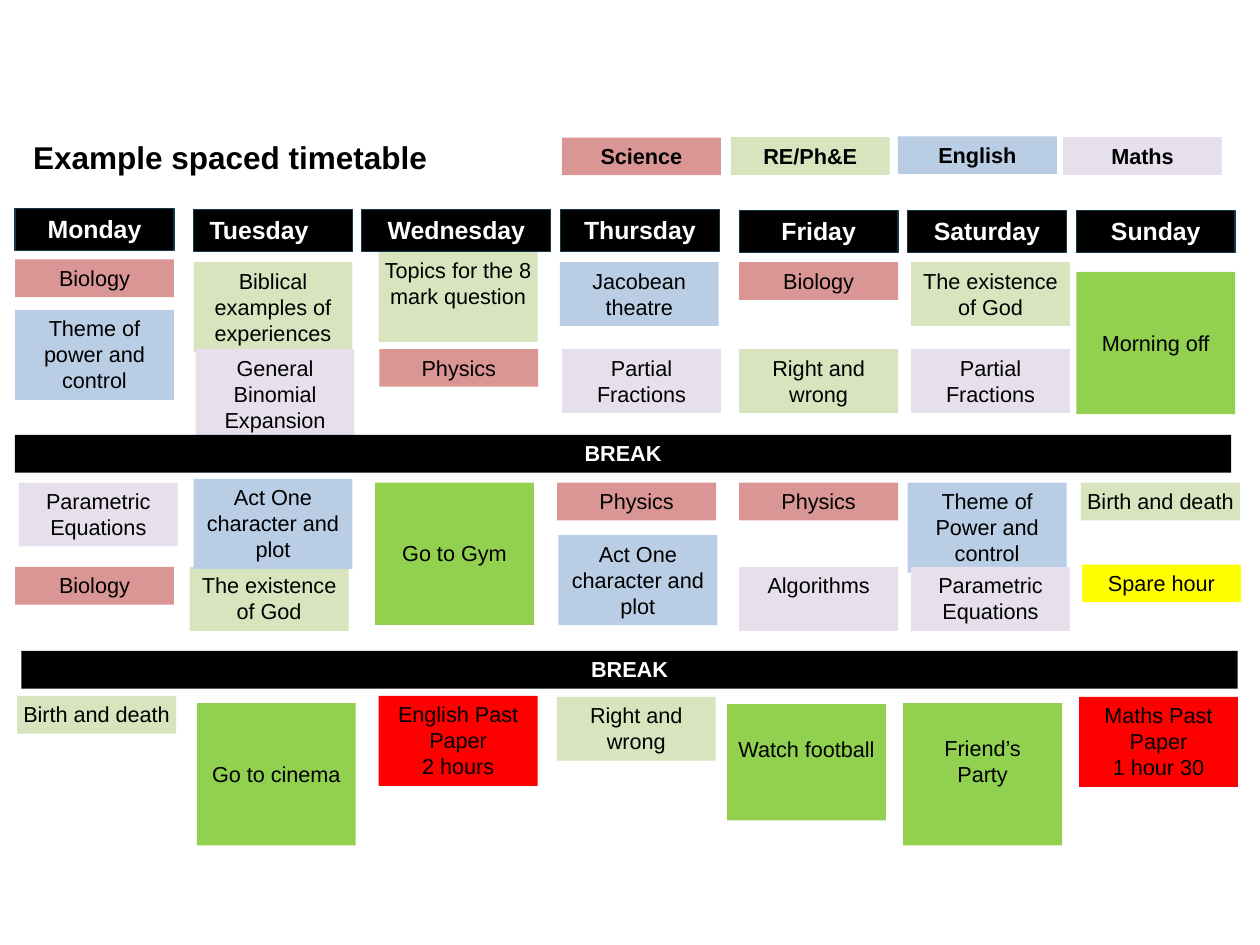
import pptx
import pptx.dml.color
import pptx.enum.shapes
import pptx.enum.text
import pptx.util

Pt = pptx.util.Pt
ALIGN = pptx.enum.text.PP_ALIGN


class Theme:
    font = "Arial"
    title_size, day_size, body_size = 18, 14.2, 12.4
    black, white, day_outline = "000000", "FFFFFF", "103845"
    fills = {
        "Science": "D99694", "RE/Ph&E": "D7E4BD", "English": "B9CDE5",
        "Maths": "E6E0EC", "Leisure": "92D050", "Exam": "FF0000",
        "Spare": "FFFF00",
    }


INSET = 3
LINE_HEIGHT = 14.95
CARD_WIDTH = 90.8
DAY_HEIGHT = 24
DAY_TOP = 119.8
MORNING, AFTERNOON, EVENING = 149.8, 275.8, 398.2
LATE_MORNING, LATE_AFTERNOON = MORNING + 49.7, AFTERNOON + 48.2

# Day: left, width, nudge of the heading, cards.
# Card: text, subject, lines of height, offset from the day's left, top,
# and optionally the number of lines left free above the text.
DAYS = {
    "Monday": (8.6, CARD_WIDTH, -0.5, [
        ("Biology", "Science", 1, 0, MORNING - 1.5),
        ("Theme of power and control", "English", 3, 0, MORNING + 27.3),
        ("Parametric Equations", "Maths", 2, 2.2, AFTERNOON),
        ("Biology", "Science", 1, 0, LATE_AFTERNOON),
        ("Birth and death", "RE/Ph&E", 1, 1.2, EVENING - 0.5)]),
    "Tuesday": (110.6, CARD_WIDTH, 0, [
        ("Biblical examples of experiences", "RE/Ph&E", 3, 0, MORNING),
        ("General Binomial Expansion", "Maths", 3, 1.2, LATE_MORNING),
        ("The existence of God", "RE/Ph&E", 2, -2.2, LATE_AFTERNOON),
        ("Act One character and plot", "English", 3, 0, AFTERNOON - 2.2),
        ("Go to cinema", "Leisure", 5, 1.9, EVENING + 3.6, 2)]),
    "Wednesday": (206.8, 108, 0, [
        ("Topics for the 8 mark question", "RE/Ph&E", 3, 9.6, MORNING - 5.8),
        ("Physics", "Science", 1, 10, LATE_MORNING),
        ("Go to Gym", "Leisure", 5, 7.5, AFTERNOON, 2),
        ("English Past Paper\n2 hours", "Exam", 3, 9.6, EVENING - 0.5)]),
    "Thursday": (320.2, CARD_WIDTH, 0, [
        ("Jacobean theatre", "English", 2, -0.3, MORNING),
        ("Partial Fractions", "Maths", 2, 1, LATE_MORNING),
        ("Physics", "Science", 1, -1.8, AFTERNOON),
        ("Act One character and plot", "English", 3, -1.1, AFTERNOON + 30),
        ("Right and wrong", "RE/Ph&E", 2, -2, EVENING)]),
    "Friday": (422.4, CARD_WIDTH, 0.3, [
        ("Biology", "Science", 1, 0, MORNING),
        ("Right and wrong", "RE/Ph&E", 2, 0, LATE_MORNING),
        ("Physics", "Science", 1, 0, AFTERNOON),
        ("Algorithms", "Maths", 2, 0, LATE_AFTERNOON),
        ("Watch football", "Leisure", 4, -6.9, EVENING + 4.2, 1)]),
    "Saturday": (518.5, CARD_WIDTH, 0.3, [
        ("The existence of God", "RE/Ph&E", 2, 2.1, MORNING),
        ("Partial Fractions", "Maths", 2, 2.1, LATE_MORNING),
        ("Theme of Power and control", "English", 3, 0.2, AFTERNOON),
        ("Parametric Equations", "Maths", 2, 2.1, LATE_AFTERNOON),
        ("Friend’s\nParty", "Leisure", 5, -2.4, EVENING + 3.6, 1)]),
    "Sunday": (615, CARD_WIDTH, 0.3, [
        ("Morning off", "Leisure", 5, 0, MORNING + 5.6, 2),
        ("Birth and death", "RE/Ph&E", 1, 2.7, AFTERNOON),
        ("Spare hour", "Spare", 1, 3.3, LATE_AFTERNOON - 1.4),
        ("Maths Past Paper\n1 hour 30", "Exam", 3, 1.6, EVENING)]),
}
LEGEND = {"Science": (321.1, 78.6), "RE/Ph&E": (417.6, 78.4),
          "English": (513.1, 78), "Maths": (607.5, 78.4)}
BREAKS = [(8.6, 248.6), (12.3, 372)]
BREAK_WIDTH = 695


def rgb(value):
    return pptx.dml.color.RGBColor.from_string(value)


def card_height(lines):
    return 2 * INSET + 0.6 + lines * LINE_HEIGHT


def write(shape, text, size, color, bold=False, align=ALIGN.CENTER, **margins):
    frame = shape.text_frame
    frame.text = text
    settings = {"word_wrap": True,
                "auto_size": pptx.enum.text.MSO_AUTO_SIZE.NONE,
                "vertical_anchor": pptx.enum.text.MSO_ANCHOR.TOP}
    for side in ("left", "top", "right", "bottom"):
        settings["margin_" + side] = Pt(margins.get(side, INSET))
    for name, value in settings.items():
        setattr(frame, name, value)
    for paragraph in frame.paragraphs:
        paragraph.alignment = align
        font = paragraph.runs[0].font
        for name, value in {"name": Theme.font, "size": Pt(size),
                            "bold": bold}.items():
            setattr(font, name, value)
        font.color.rgb = rgb(color)


def add_box(slide, box, fill, outline=None):
    shape = slide.shapes.add_shape(
        pptx.enum.shapes.MSO_SHAPE.RECTANGLE, *map(Pt, box))
    shape.shadow.inherit = False
    shape.fill.solid()
    shape.fill.fore_color.rgb = rgb(fill)
    if outline:
        shape.line.color.rgb = rgb(outline)
        shape.line.width = Pt(0.75)
    else:
        shape.line.fill.background()
    return shape


def add_title(slide, text, box):
    title = slide.shapes.title
    for name, value in zip(("left", "top", "width", "height"), box):
        setattr(title, name, Pt(value))
    write(title, text, Theme.title_size, Theme.black, True, ALIGN.LEFT)


def add_day(slide, day, left, width, nudge, cards):
    """Place a day's heading and the cards below it."""
    heading = add_box(slide, (left, DAY_TOP + nudge, width, DAY_HEIGHT),
                      Theme.black, Theme.day_outline)
    margins = {"right": 19} if day == "Tuesday" else {}
    write(heading, day, Theme.day_size, Theme.white, True, **margins)
    for text, subject, lines, offset, top, *free_lines in cards:
        card = add_box(slide,
                       (left + offset, top, CARD_WIDTH, card_height(lines)),
                       Theme.fills[subject])
        write(card, text, Theme.body_size, Theme.black,
              top=INSET + sum(free_lines) * LINE_HEIGHT)


def add_break(slide, left, top):
    bar = add_box(slide, (left, top, BREAK_WIDTH, card_height(1)), Theme.black)
    write(bar, "BREAK", Theme.body_size, Theme.white, True)


def add_legend(slide, positions):
    for subject, (left, top) in positions.items():
        key = add_box(slide, (left, top, CARD_WIDTH, card_height(1)),
                      Theme.fills[subject])
        write(key, subject, Theme.body_size, Theme.black, True)


def main():
    presentation = pptx.Presentation()
    presentation.slide_width, presentation.slide_height = Pt(720), Pt(540)
    slide = presentation.slides.add_slide(presentation.slide_layouts[5])
    add_title(slide, "Example spaced timetable", (16, 76, 501, 28))
    for day, details in DAYS.items():
        add_day(slide, day, *details)
    for position in BREAKS:
        add_break(slide, *position)
    add_legend(slide, LEGEND)
    presentation.save("out.pptx")


if __name__ == "__main__":
    main()
